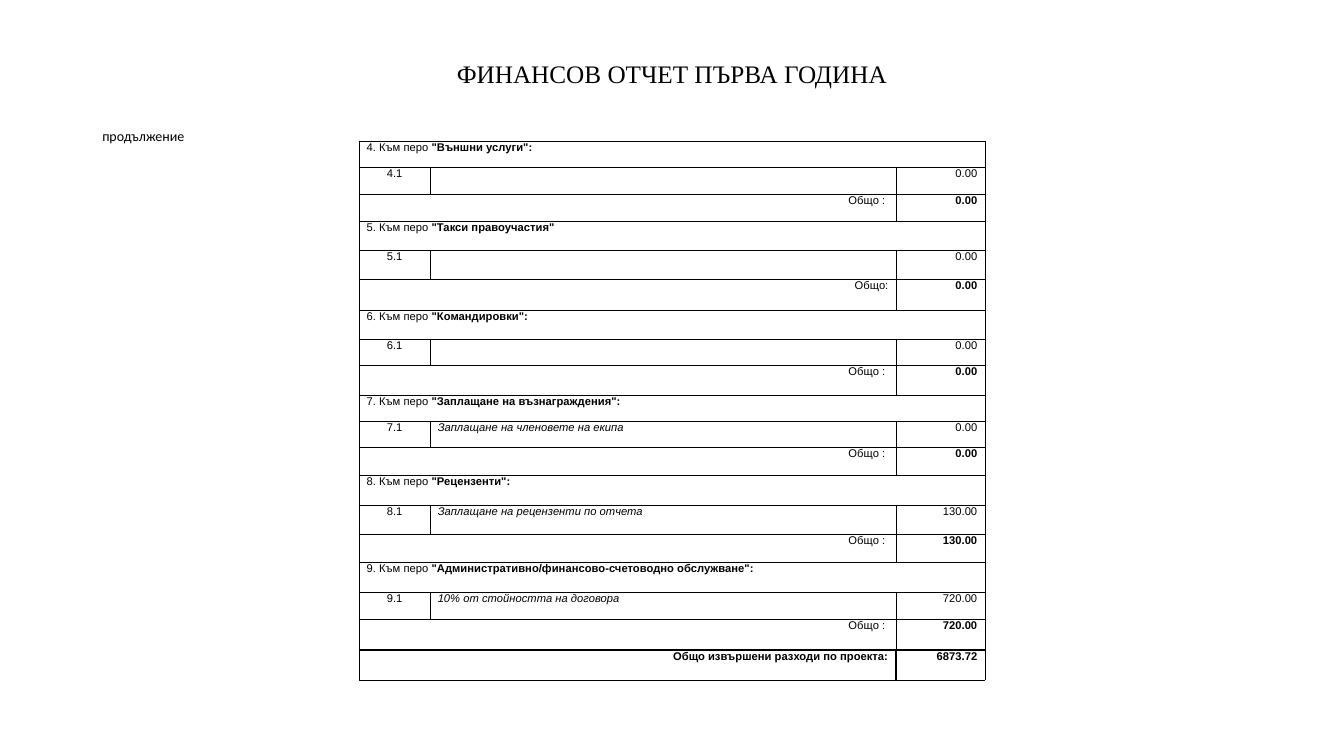
from lxml.etree import SubElement
from pptx import Presentation
from pptx.dml.color import RGBColor
from pptx.enum.text import MSO_ANCHOR, PP_ALIGN
from pptx.oxml.ns import qn
from pptx.util import Pt

LEFT, MID, RIGHT = PP_ALIGN.LEFT, PP_ALIGN.CENTER, PP_ALIGN.RIGHT
INK = "000000"

GROUPS = [
    (4, '"Външни услуги":', "", "0.00", "Общо : "),
    (5, '"Такси правоучастия"', "", "0.00", "Общо:"),
    (6, '"Командировки":', "", "0.00", "Общо : "),
    (7, '"Заплащане на възнаграждения":', "Заплащане на членовете на екипа", "0.00", "Общо : "),
    (8, '"Рецензенти":', "Заплащане на рецензенти по отчета", "130.00", "Общо : "),
    (9, '"Административно/финансово-счетоводно обслужване":',
     "10% от стойността на договора", "720.00", "Общо : "),
]
COLS = [50.8, 332.7, 63.5]
ROWS = [18.6, 19.3, 19.3, 20.7, 20.7, 22.1, 20.7, 18.6, 21.4, 18.6,
        18.6, 20, 21.4, 20.7, 20, 21.4, 19.3, 22.1, 21.4]


def color(text):
    return RGBColor.from_string(text)


class Page:
    def __init__(self, deck):
        self.slide = deck.slides.add_slide(deck.slide_layouts[6])
        self.cell_font = {"name": "Arial", "size": Pt(8)}
        self.inset = {"margin_left": Pt(5.4), "margin_right": Pt(5.4),
                      "margin_top": 0, "margin_bottom": 0}

    def apply(self, item, style):
        for key, value in style.items():
            setattr(item, key, value)

    def put(self, para, parts, font, align=LEFT):
        para.alignment = align
        for text, style in parts:
            run = para.add_run()
            run.text = text
            self.apply(run.font, font | style)
            run.font.color.rgb = color(INK)

    def text(self, box, words, font, align=LEFT, anchor=MSO_ANCHOR.TOP):
        frame = self.slide.shapes.add_textbox(*map(Pt, box)).text_frame
        self.apply(frame, {"word_wrap": True, "vertical_anchor": anchor})
        para = frame.paragraphs[0]
        para.line_spacing = 0.9
        self.put(para, [(words, {})], font, align)

    def edge(self, cell, side, width):
        line = SubElement(cell._tc.get_or_add_tcPr(), qn("a:ln" + side), w=str(Pt(width)))
        fill = SubElement(line, qn("a:solidFill"))
        SubElement(fill, qn("a:srgbClr"), val=INK)

    def table(self, spot, cols, rows):
        size = sum(cols), sum(rows)
        shape = self.slide.shapes.add_table(len(rows), len(cols), *map(Pt, spot + size))
        grid = shape.table
        self.apply(grid, {"first_row": False, "horz_banding": False})
        for col, width in zip(grid.columns, cols):
            col.width = Pt(width)
        for row, height in zip(grid.rows, rows):
            row.height = Pt(height)
        last = len(rows) - 1
        for r in range(len(rows)):
            for c in range(len(cols)):
                cell = grid.cell(r, c)
                self.apply(cell, self.inset)
                thick = {"T": r == last, "B": r == last - 1,
                         "L": r == last and c == 2, "R": r == last and c < 2}
                for side in "LRTB":
                    self.edge(cell, side, 1 if thick[side] else 0.5)
                cell.fill.background()
                para = cell.text_frame.paragraphs[0]
                SubElement(para._p, qn("a:endParaRPr"), sz="800")
        return grid

    def fill(self, grid, row, col, parts, align=LEFT, span=1):
        cell = grid.cell(row, col)
        if span > 1:
            cell.merge(grid.cell(row, col + span - 1))
        self.put(cell.text_frame.paragraphs[0], parts, self.cell_font, align)


def main():
    deck = Presentation()
    deck.slide_width, deck.slide_height = Pt(960), Pt(540)
    page = Page(deck)
    page.text((66, 28.8, 828, 50.4), "ФИНАНСОВ ОТЧЕТ ПЪРВА ГОДИНА",
              {"name": "Times New Roman", "size": Pt(18)}, MID, MSO_ANCHOR.MIDDLE)
    page.text((66, 88.6, 828, 397.4), "продължение", {"name": "Calibri", "size": Pt(10)})

    grid = page.table((256.5, 101), COLS, ROWS)
    bold, slant = {"bold": True}, {"italic": True}
    for i, (num, head, note, cost, total) in enumerate(GROUPS):
        row = 3 * i
        page.fill(grid, row, 0, [(f"{num}. Към перо ", {}), (head, bold)], span=3)
        page.fill(grid, row + 1, 0, [(f"{num}.1", {})], MID)
        if note:
            page.fill(grid, row + 1, 1, [(note, slant)])
        page.fill(grid, row + 1, 2, [(cost, {})], RIGHT)
        page.fill(grid, row + 2, 0, [(total, {})], RIGHT, 2)
        page.fill(grid, row + 2, 2, [(cost, bold)], RIGHT)
    end = len(ROWS) - 1
    page.fill(grid, end, 0, [("Общо извършени разходи по проекта:", bold)], RIGHT, 2)
    page.fill(grid, end, 2, [("6873.72", bold)], RIGHT)
    deck.save("out.pptx")


if __name__ == "__main__":
    main()
